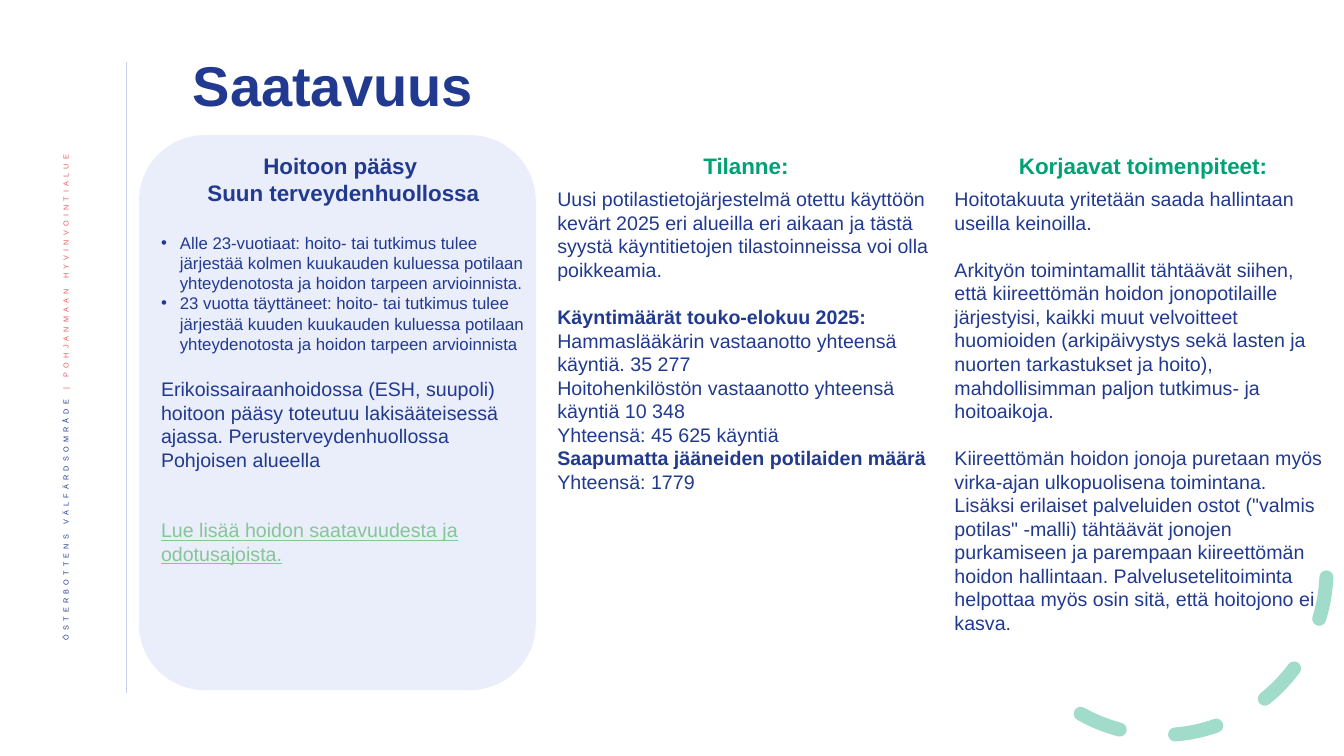
from pptx import Presentation
from pptx import util as u
from pptx.dml import color
from pptx.enum import dml, shapes, text
from pptx.oxml import ns, xmlchemy

NAVY, GREEN, CORAL = "213A8F", "00A174", "EB5C5F"
LAVENDER, LIGHT_GREEN = "C9D2F2", "85C598"


def paint(target, hex_color, opacity=100):
    """Colour a fill or a font; opacity is in percent and for fills only."""
    if hasattr(target, "solid"):
        target.solid()
        target.fore_color.rgb = color.RGBColor.from_string(hex_color)
        if opacity < 100:
            for rgb in target._xPr.iter(ns.qn("a:srgbClr")):
                alpha = xmlchemy.OxmlElement("a:alpha")
                alpha.set("val", str(opacity * 1000))
                rgb.append(alpha)
    else:
        target.color.rgb = color.RGBColor.from_string(hex_color)


def write_paragraphs(frame, rows):
    """Fill a frame from rows of (wording, size, colour, style, space before).

    Style letters: b bold, u underlined, c centred, l bulleted list.
    """
    frame.word_wrap = True
    frame.auto_size = text.MSO_AUTO_SIZE.SHAPE_TO_FIT_TEXT
    frame.vertical_anchor = text.MSO_ANCHOR.TOP
    for index, (wording, size, hex_color, style, before) in enumerate(rows):
        paragraph = frame.paragraphs[0] if index == 0 else frame.add_paragraph()
        paragraph.text = wording
        properties = paragraph._p.get_or_add_pPr()
        indent = u.Pt(13.5) if "l" in style else 0
        properties.set("marL", str(indent))
        properties.set("indent", str(-indent))
        if indent:
            bullet = xmlchemy.OxmlElement("a:buChar")
            bullet.set("char", "•")
        else:
            bullet = xmlchemy.OxmlElement("a:buNone")
        properties.append(bullet)
        paragraph.alignment = text.PP_ALIGN.CENTER if "c" in style else text.PP_ALIGN.LEFT
        paragraph.line_spacing = u.Pt(size * 1.2)
        paragraph.space_before = u.Pt(before)
        paragraph.space_after = u.Pt(0)
        font = paragraph.runs[0].font
        font.name, font.size = "Arial", u.Pt(size)
        font.bold, font.underline = "b" in style, "u" in style
        paint(font, hex_color)


presentation = Presentation()
presentation.slide_width, presentation.slide_height = u.Pt(960), u.Pt(540)
slide = presentation.slides.add_slide(presentation.slide_layouts[1])

# Side band
divider = slide.shapes.add_connector(
    shapes.MSO_CONNECTOR.STRAIGHT, u.Pt(90), u.Pt(44), u.Pt(90), u.Pt(495))
paint(divider.line.fill, LAVENDER)
divider.line.width = u.Pt(0.5)
divider._element.spPr.append(xmlchemy.OxmlElement("a:effectLst"))

region_label = slide.shapes.add_textbox(u.Pt(30), u.Pt(103.5), u.Pt(37.5), u.Pt(412.5))
label_frame = region_label.text_frame
label_frame.word_wrap = True
label_frame.vertical_anchor = text.MSO_ANCHOR.MIDDLE
label_frame._txBody.bodyPr.set("vert", "vert270")
paragraph = label_frame.paragraphs[0]
paragraph.alignment = text.PP_ALIGN.RIGHT
paragraph.line_spacing = 0.9
for wording, hex_color in (("ÖSTERBOTTENS VÄLFÄRDSOMRÅDE ", NAVY),
                           ("| POHJANMAAN HYVINVOINTIALUE", CORAL)):
    run = paragraph.add_run()
    run.text = wording
    run.font.name, run.font.size = "Arial", u.Pt(9)
    paint(run.font, hex_color)
    run_properties = run._r.get_or_add_rPr()
    run_properties.set("baseline", "30000")
    run_properties.set("spc", "300")

# Dashed corner arc
arc = slide.shapes.add_shape(
    shapes.MSO_SHAPE.ARC, u.Pt(712), u.Pt(289.5), u.Pt(235.5), u.Pt(235.5))
arc.adjustments[0], arc.adjustments[1] = 158.17, 17.81
arc.rotation = 98.9
arc.shadow.inherit = False
arc.fill.background()
paint(arc.line.fill, GREEN, 36)
arc.line.width = u.Pt(10)
arc.line.dash_style = dml.MSO_LINE.DASH
arc.line._get_or_add_ln().set("cap", "rnd")

# Title
title = slide.shapes.title
title.left, title.top, title.width, title.height = u.Pt(130.5), u.Pt(32.5), u.Pt(734), u.Pt(61)
title.text_frame.text = "Saatavuus"
title.text_frame.vertical_anchor = text.MSO_ANCHOR.MIDDLE
paragraph = title.text_frame.paragraphs[0]
paragraph.alignment = text.PP_ALIGN.LEFT
paragraph.line_spacing = 0.9
font = paragraph.runs[0].font
font.name, font.size, font.bold = "Arial", u.Pt(40), True
paint(font, NAVY)

# Access column on its card
card = slide.shapes.add_shape(
    shapes.MSO_SHAPE.ROUNDED_RECTANGLE, u.Pt(99.2), u.Pt(96.5), u.Pt(283.5), u.Pt(396.5))
card.shadow.inherit = False
paint(card.fill, LAVENDER, 38)
card.line.fill.background()

access = slide.placeholders[1]
access.left, access.top, access.width, access.height = u.Pt(107.8), u.Pt(105), u.Pt(275), u.Pt(305)
card._element.addnext(access._element)
write_paragraphs(access.text_frame, [
    ("Hoitoon pääsy ", 16, NAVY, "bc", 0),
    ("Suun terveydenhuollossa", 16, NAVY, "bc", 0),
    ("Alle 23-vuotiaat: hoito- tai tutkimus tulee järjestää kolmen kuukauden kuluessa "
     "potilaan yhteydenotosta ja hoidon tarpeen arvioinnista.", 12, NAVY, "l", 19.2),
    ("23 vuotta täyttäneet: hoito- tai tutkimus tulee järjestää kuuden kuukauden kuluessa "
     "potilaan yhteydenotosta ja hoidon tarpeen arvioinnista", 12, NAVY, "l", 0),
    ("Erikoissairaanhoidossa (ESH, suupoli) hoitoon pääsy toteutuu lakisääteisessä ajassa. "
     "Perusterveydenhuollossa Pohjoisen alueella", 14, NAVY, "", 16.8),
    ("Lue lisää hoidon saatavuudesta ja odotusajoista.", 14, LIGHT_GREEN, "u", 33.6),
])

# Situation and corrective action columns
situation = [
    ("Tilanne:", 16, GREEN, "bc", 0),
    ("Uusi potilastietojärjestelmä otettu käyttöön kevärt 2025 eri alueilla eri aikaan ja "
     "tästä syystä käyntitietojen tilastoinneissa voi olla poikkeamia.", 14, NAVY, "", 6),
    ("Käyntimäärät touko-elokuu 2025:", 14, NAVY, "b", 16.8),
    ("Hammaslääkärin vastaanotto yhteensä käyntiä. 35 277", 14, NAVY, "", 0),
    ("Hoitohenkilöstön vastaanotto yhteensä käyntiä 10 348", 14, NAVY, "", 0),
    ("Yhteensä: 45 625 käyntiä", 14, NAVY, "", 0),
    ("Saapumatta jääneiden potilaiden määrä", 14, NAVY, "b", 0),
    ("Yhteensä: 1779", 14, NAVY, "", 0),
]
actions = [
    ("Korjaavat toimenpiteet:", 16, GREEN, "bc", 0),
    ("Hoitotakuuta yritetään saada hallintaan useilla keinoilla.", 14, NAVY, "", 6),
    ("Arkityön toimintamallit tähtäävät siihen, että kiireettömän hoidon jonopotilaille "
     "järjestyisi, kaikki muut velvoitteet huomioiden (arkipäivystys sekä lasten ja nuorten "
     "tarkastukset ja hoito), mahdollisimman paljon tutkimus- ja hoitoaikoja.",
     14, NAVY, "", 16.8),
    ("Kiireettömän hoidon jonoja puretaan myös virka-ajan ulkopuolisena toimintana. Lisäksi "
     "erilaiset palveluiden ostot (\"valmis potilas\" -malli) tähtäävät jonojen purkamiseen ja "
     "parempaan kiireettömän hoidon hallintaan. Palvelusetelitoiminta helpottaa myös osin "
     "sitä, että hoitojono ei kasva.", 14, NAVY, "", 16.8),
]
column_width = 283.7
for index, (rows, height) in enumerate(((situation, 253.5), (actions, 321))):
    column = slide.shapes.add_textbox(
        u.Pt(391 + index * column_width), u.Pt(105), u.Pt(column_width), u.Pt(height))
    write_paragraphs(column.text_frame, rows)

presentation.save("out.pptx")
